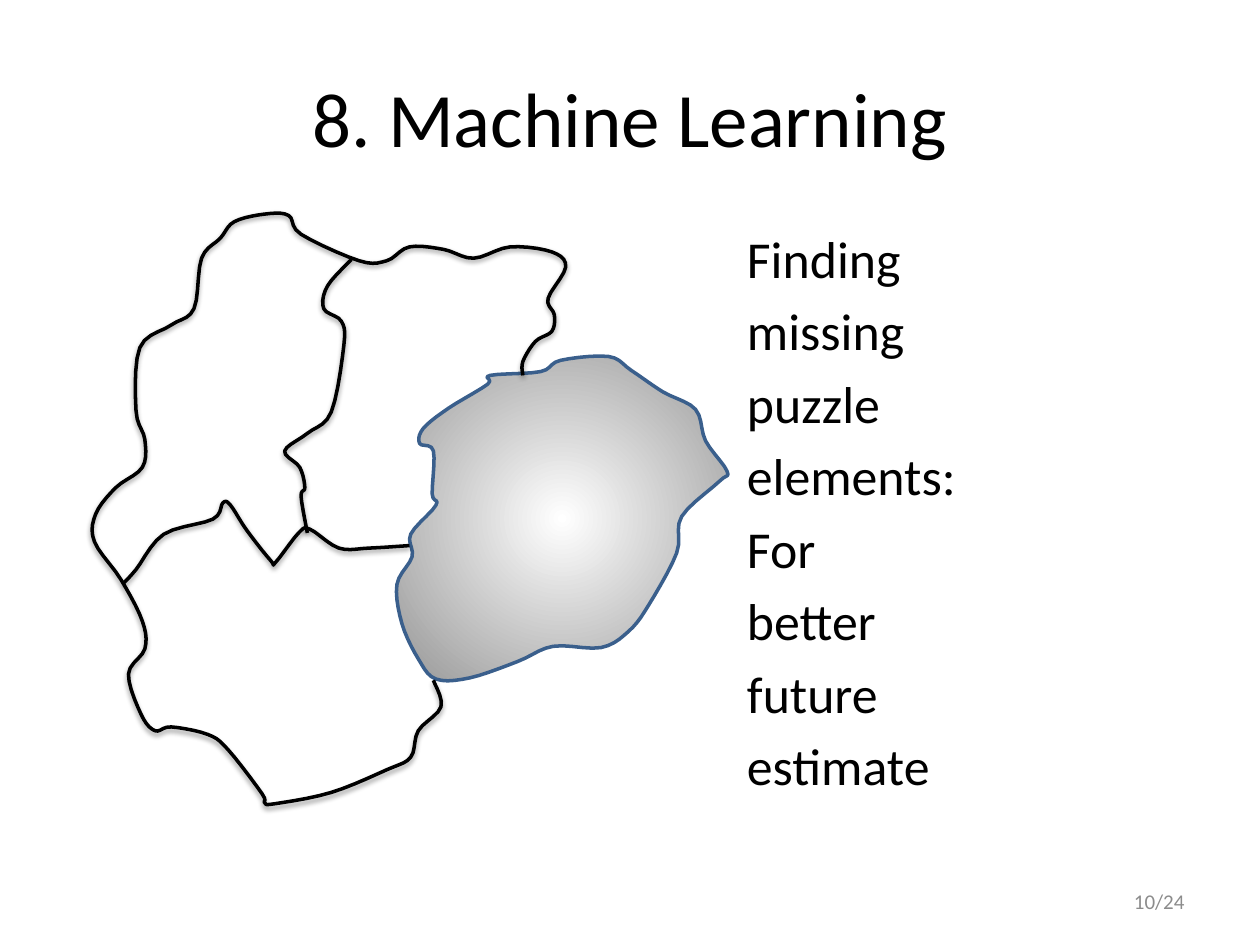
import pptx
import pptx.dml.color
import pptx.enum.text
import pptx.oxml
import pptx.oxml.ns
import pptx.util
from pptx.util import Inches

BLACK = pptx.dml.color.RGBColor(0x00, 0x00, 0x00)
WHITE = pptx.dml.color.RGBColor(0xFF, 0xFF, 0xFF)
GRAY = pptx.dml.color.RGBColor(0x97, 0x97, 0x97)
PAGE_GRAY = pptx.dml.color.RGBColor(0x8C, 0x8C, 0x8C)
BLUE = pptx.dml.color.RGBColor(0x3A, 0x5F, 0x8C)
FONT = "Calibri"
ALIGN = pptx.enum.text.PP_ALIGN
ANCHOR = pptx.enum.text.MSO_ANCHOR

# Content: text
TITLE = ["8. Machine Learning"]
MESSAGE = ["Finding", "missing", "puzzle", "elements:",
           "For", "better", "future", "estimate"]
PAGE = ["10/24"]

# Content: corners of the puzzle outlines in inches, joined by smooth curves
MISSING_PIECE = [
    (3.87, 3.05), (3.56, 3.24), (3.36, 3.4), (3.33, 3.52), (3.44, 3.58), (3.43, 3.92),
    (3.46, 4.01), (3.26, 4.24), (3.27, 4.42), (3.15, 4.64), (3.19, 4.95), (3.32, 5.23),
    (3.46, 5.39), (3.73, 5.38), (4.11, 5.25), (4.39, 5.13), (4.77, 5.14), (4.99, 5.01),
    (5.15, 4.8), (5.37, 4.39), (5.41, 4.1), (5.71, 3.82), (5.77, 3.74), (5.6, 3.5),
    (5.52, 3.25), (5.26, 3.11), (5.01, 2.94), (4.83, 2.83), (4.45, 2.86), (4.29, 2.95),
    (3.89, 2.98)]

OUTER_EDGE = [
    (3.44, 5.4), (3.5, 5.61), (3.32, 5.8), (3.26, 6.01), (3.07, 6.11), (2.63, 6.29),
    (2.18, 6.38), (2.1, 6.37), (2.08, 6.3), (1.81, 5.95), (1.65, 5.83), (1.36, 5.77),
    (1.23, 5.8), (1.12, 5.67), (1.02, 5.35), (1.15, 5.15), (1.13, 4.93), (0.96, 4.6),
    (0.75, 4.3), (0.76, 4.08), (0.92, 3.87), (1.13, 3.71), (1.15, 3.49), (1.08, 3.26),
    (1.11, 2.76), (1.36, 2.58), (1.54, 2.45), (1.6, 2.05), (1.75, 1.89), (1.86, 1.76),
    (2.1, 1.7), (2.29, 1.71), (2.39, 1.86), (2.85, 2.07), (3.07, 2.07), (3.25, 1.96),
    (3.52, 1.98), (3.76, 2.05), (4.05, 1.96), (4.38, 2), (4.49, 2.12), (4.35, 2.37),
    (4.4, 2.5), (4.38, 2.63), (4.25, 2.71), (4.15, 2.87), (4.15, 2.98)]

LOWER_SEAM = [
    (0.98, 4.63), (1.08, 4.52), (1.3, 4.24), (1.69, 4.12), (1.77, 3.99), (1.83, 4.01),
    (1.96, 4.21), (2.15, 4.45), (2.19, 4.46), (2.37, 4.23), (2.46, 4.2), (2.69, 4.35),
    (2.93, 4.35), (3.25, 4.33)]

UPPER_SEAM = [
    (2.79, 2.06), (2.6, 2.27), (2.57, 2.45), (2.71, 2.55), (2.73, 2.74), (2.63, 3.27),
    (2.44, 3.44), (2.26, 3.58), (2.38, 3.71), (2.42, 3.87), (2.39, 3.94), (2.44, 4.23)]

NS = pptx.oxml.ns.nsdecls("a")
SHADOW = (f'<a:outerShdw {NS} blurRad="{pptx.util.Pt(3.1)}" dist="{pptx.util.Pt(1.6)}" '
          'dir="5400000" rotWithShape="0"><a:srgbClr val="000000">'
          '<a:alpha val="38000"/></a:srgbClr></a:outerShdw>')
RADIAL = (f'<a:path {NS} path="circle">'
          '<a:fillToRect l="50000" t="50000" r="50000" b="50000"/></a:path>')


def add_text(slide, lines, box, size, color, align, anchor, space_before=0):
    frame = slide.shapes.add_textbox(*map(Inches, box)).text_frame
    frame.word_wrap = True
    frame.vertical_anchor = anchor
    frame.text = "\n".join(lines)
    for paragraph in frame.paragraphs:
        paragraph.alignment = align
        paragraph.space_before = pptx.util.Pt(space_before)
        paragraph.font.name = FONT
        paragraph.font.size = pptx.util.Pt(size)
        paragraph.font.color.rgb = color


def smooth(corners, close, steps=5):
    """Run a Catmull-Rom curve through the corners."""
    before, after = (corners[-1:], corners[:2]) if close else (corners[:1], corners[-1:])
    padded = before + corners + after
    curve = []
    for a, b, c, d in zip(padded, padded[1:], padded[2:], padded[3:]):
        for step in range(steps):
            t = step / steps
            curve.append(tuple(
                q + t / 2 * (r - p + t * (2 * p - 5 * q + 4 * r - s
                                          + t * (3 * (q - r) + s - p)))
                for p, q, r, s in zip(a, b, c, d)))
    return curve if close else curve + corners[-1:]


def add_outline(slide, corners, color, close=False):
    start, *rest = [(Inches(x), Inches(y)) for x, y in smooth(corners, close)]
    builder = slide.shapes.build_freeform(*start)
    builder.add_line_segments(rest, close=close)
    outline = builder.convert_to_shape()
    outline.shadow.inherit = False
    outline.fill.background()
    outline.line.color.rgb = color
    outline.line.width = pptx.util.Pt(2)
    return outline


def fill_radial(outline, center, edge):
    outline.fill.gradient()
    for stop, color in zip(outline.fill.gradient_stops, (center, edge)):
        stop.color.rgb = color
    linear = outline._element.spPr.find(".//" + pptx.oxml.ns.qn("a:lin"))
    linear.getparent().replace(linear, pptx.oxml.parse_xml(RADIAL))


def main():
    deck = pptx.Presentation()
    deck.slide_width, deck.slide_height = Inches(10), Inches(7.5)
    slide = deck.slides.add_slide(deck.slide_layouts[6])

    # Title and message
    add_text(slide, TITLE, (0.5, 0.3, 9, 1.25), 44, BLACK, ALIGN.CENTER, ANCHOR.MIDDLE)
    add_text(slide, MESSAGE, (5.83, 1.75, 4.25, 4.25), 29.6, BLACK,
             ALIGN.LEFT, ANCHOR.TOP, space_before=5.9)

    # Missing puzzle piece
    fill_radial(add_outline(slide, MISSING_PIECE, BLUE, close=True), WHITE, GRAY)

    # Outer edge and seams of the known pieces
    for corners in (OUTER_EDGE, LOWER_SEAM, UPPER_SEAM):
        edge = add_outline(slide, corners, BLACK)
        effects = edge._element.spPr.find(pptx.oxml.ns.qn("a:effectLst"))
        effects.append(pptx.oxml.parse_xml(SHADOW))

    # Page number
    add_text(slide, PAGE, (7.17, 6.95, 2.33, 0.4), 12, PAGE_GRAY, ALIGN.RIGHT, ANCHOR.MIDDLE)

    deck.save("out.pptx")


if __name__ == "__main__":
    main()
